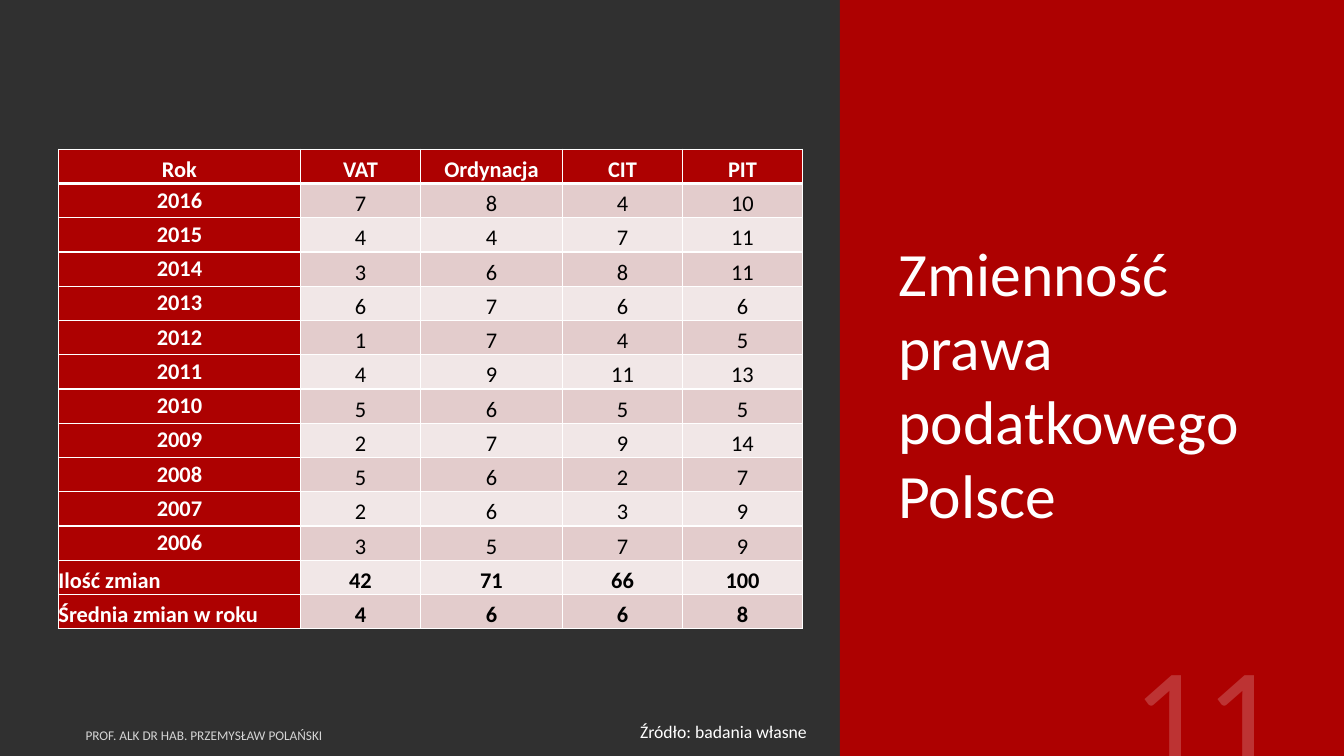
from lxml.etree import SubElement
from pptx import Presentation
from pptx.dml.color import RGBColor
from pptx.enum.shapes import MSO_SHAPE
from pptx.enum.text import MSO_ANCHOR, PP_ALIGN
from pptx.oxml.ns import qn
from pptx.util import Inches, Pt

CHARCOAL = RGBColor(0x30, 0x30, 0x30)
RED = RGBColor(0xAD, 0x01, 0x01)
ROSE = RGBColor(0xE3, 0xCC, 0xCC)
PALE_ROSE = RGBColor(0xF1, 0xE7, 0xE7)
WHITE = RGBColor(0xFF, 0xFF, 0xFF)
BLACK = RGBColor(0x00, 0x00, 0x00)
FONT = "Calibri"

TITLE = "Zmienność prawa podatkowego Polsce"
HEADER = ("Rok", "VAT", "Ordynacja", "CIT", "PIT")
YEARS = [
    ("2016", 7, 8, 4, 10),
    ("2015", 4, 4, 7, 11),
    ("2014", 3, 6, 8, 11),
    ("2013", 6, 7, 6, 6),
    ("2012", 1, 7, 4, 5),
    ("2011", 4, 9, 11, 13),
    ("2010", 5, 6, 5, 5),
    ("2009", 2, 7, 9, 14),
    ("2008", 5, 6, 2, 7),
    ("2007", 2, 6, 3, 9),
    ("2006", 3, 5, 7, 9),
]
TOTALS = [
    ("Ilość zmian", 42, 71, 66, 100),
    ("Średnia zmian w roku", 4, 6, 6, 8),
]
COLUMN_WIDTHS = (2.4, 1.19, 1.41, 1.19, 1.19)
ROW_HEIGHT = 0.34
CAPTIONS = [
    {"text": "Źródło: badania własne", "box": (6.25, 7.14, 4.04, 0.28), "size": 12.6,
     "opacity": 100, "anchor": MSO_ANCHOR.TOP,
     "paragraph": {"line_spacing": 0.8}},
    {"text": "PROF. ALK DR HAB. PRZEMYSŁAW POLAŃSKI", "box": (0.75, 7.17, 5.5, 0.25),
     "size": 9.5, "opacity": 80, "anchor": MSO_ANCHOR.MIDDLE,
     "paragraph": {"alignment": PP_ALIGN.LEFT}},
    {"text": "11", "box": (9.58, 6.43, 3.2, 1.53), "size": 103,
     "opacity": 20, "anchor": MSO_ANCHOR.BOTTOM,
     "paragraph": {"alignment": PP_ALIGN.RIGHT}},
]


def set_attributes(target, values):
    for name, value in values.items():
        setattr(target, name, value)


def write_text(paragraph, text, size, color, bold=False):
    run = paragraph.add_run()
    run.text = text
    set_attributes(run.font, {"name": FONT, "size": Pt(size), "bold": bold})
    run.font.color.rgb = color
    return run


def set_opacity(run, percent):
    color = run.font.fill._xPr.find(".//" + qn("a:srgbClr"))
    SubElement(color, qn("a:alpha"), val=str(percent * 1000))


def add_borders(cell, widths):
    properties = cell._tc.get_or_add_tcPr()
    for side, width in widths.items():
        line = SubElement(properties, qn("a:ln" + side), w=str(Pt(width)))
        fill = SubElement(line, qn("a:solidFill"))
        SubElement(fill, qn("a:srgbClr"), val=str(WHITE))


def add_changes_table(slide):
    rows = [HEADER] + YEARS + TOTALS
    first_total = 1 + len(YEARS)
    frame = slide.shapes.add_table(
        len(rows), len(HEADER), Inches(0.58), Inches(1.48),
        Inches(sum(COLUMN_WIDTHS)), Inches(ROW_HEIGHT * len(rows)))
    table = frame.table
    for column, width in zip(table.columns, COLUMN_WIDTHS):
        column.width = Inches(width)
    for row_index, values in enumerate(rows):
        table.rows[row_index].height = Inches(ROW_HEIGHT)
        is_header = row_index == 0
        is_total = row_index >= first_total
        for column_index, value in enumerate(values):
            cell = table.cell(row_index, column_index)
            is_label = column_index == 0
            is_red = is_header or is_label
            is_year = is_label and not is_header and not is_total
            set_attributes(cell, {
                "margin_left": 0, "margin_right": 0, "margin_top": 0, "margin_bottom": 0,
                "vertical_anchor": MSO_ANCHOR.MIDDLE if is_year else MSO_ANCHOR.BOTTOM})
            add_borders(cell, {"L": 1, "R": 1, "T": 3 if row_index == 1 else 1,
                               "B": 3 if is_header else 1})
            cell.fill.solid()
            band = ROSE if row_index % 2 else PALE_ROSE
            cell.fill.fore_color.rgb = RED if is_red else band
            paragraph = cell.text_frame.paragraphs[0]
            paragraph.alignment = PP_ALIGN.LEFT if is_label and is_total else PP_ALIGN.CENTER
            write_text(paragraph, str(value), 16, WHITE if is_red else BLACK,
                       is_red or is_total)


def add_caption(slide, caption):
    box = slide.shapes.add_textbox(*map(Inches, caption["box"]))
    set_attributes(box.text_frame, {"word_wrap": True, "vertical_anchor": caption["anchor"]})
    paragraph = box.text_frame.paragraphs[0]
    set_attributes(paragraph, caption["paragraph"])
    run = write_text(paragraph, caption["text"], caption["size"], WHITE)
    if caption["opacity"] < 100:
        set_opacity(run, caption["opacity"])


def add_panel(slide):
    panel = slide.shapes.add_shape(
        MSO_SHAPE.RECTANGLE, Inches(8.33), 0, Inches(5), Inches(7.5))
    panel.shadow.inherit = False
    panel.fill.solid()
    panel.fill.fore_color.rgb = RED
    panel.line.fill.background()


def format_title(slide):
    title = slide.shapes.title
    title.element.getparent().append(title.element)
    set_attributes(title, {"left": Inches(8.81), "top": Inches(2.27),
                           "width": Inches(3.97), "height": Inches(3.06)})
    set_attributes(title.text_frame, {"word_wrap": True, "vertical_anchor": MSO_ANCHOR.MIDDLE})
    paragraph = title.text_frame.paragraphs[0]
    paragraph.alignment = PP_ALIGN.LEFT
    write_text(paragraph, TITLE, 44, WHITE)


def main():
    presentation = Presentation()
    set_attributes(presentation, {"slide_width": Inches(13.33), "slide_height": Inches(7.5)})
    slide = presentation.slides.add_slide(presentation.slide_layouts[5])
    slide.background.fill.solid()
    slide.background.fill.fore_color.rgb = CHARCOAL
    add_panel(slide)
    add_changes_table(slide)
    for caption in CAPTIONS:
        add_caption(slide, caption)
    format_title(slide)
    presentation.save("out.pptx")


if __name__ == "__main__":
    main()
